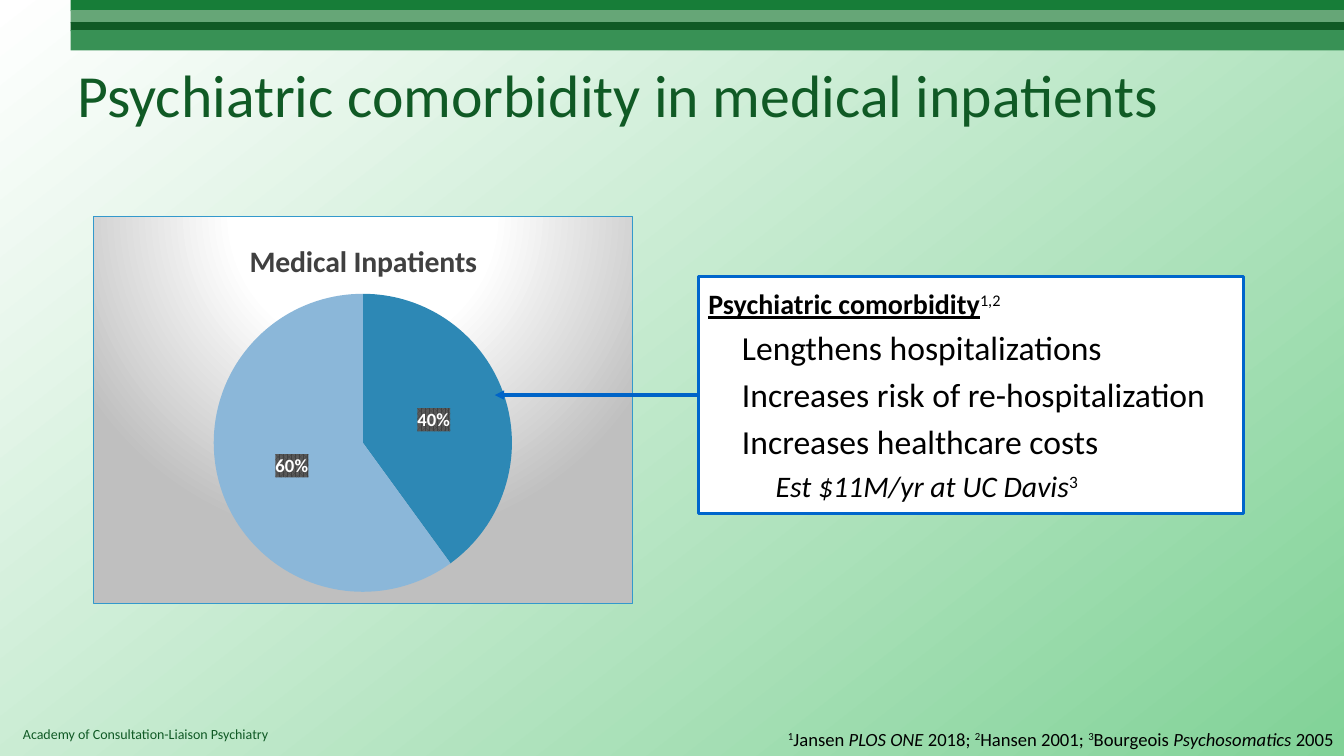
import pptx
import pptx.chart.data
import pptx.dml.color
import pptx.enum.chart
import pptx.enum.shapes
import pptx.enum.text
import pptx.oxml
import pptx.oxml.ns
import pptx.util
from pptx.util import Cm, Pt

FONT = "Calibri"
COLORS = {
    "white": "FFFFFF", "black": "000000", "backdrop": "81D297",
    "band_top": "177D38", "band_light": "66A677", "deep_green": "105A25", "band_base": "389155",
    "box_line": "0066CC", "arrow": "0064C8", "chart_line": "3399CC", "chart_gray": "BFBFBF",
    "chart_title": "404040", "label_dark": "404040", "label_stripe": "595959",
    "comorbid": "2D88B5", "other": "8BB7D9",
}
NS = pptx.oxml.ns.nsdecls("a", "c")
qn = pptx.oxml.ns.qn


def rgb(name):
    return pptx.dml.color.RGBColor.from_string(COLORS[name])


def solid(name):
    return f'<a:srgbClr val="{COLORS[name]}"/>'


def style_font(font, size, color, bold=None):
    font.name, font.size, font.bold = FONT, Pt(size), bold
    font.color.rgb = rgb(color)


def add_runs(paragraph, pieces):
    """Add (text, style) pieces: i italic, b bold, u underline, ^ superscript."""
    for text, style in pieces:
        run = paragraph.add_run()
        run.text = text
        for mark, attribute in (("i", "italic"), ("b", "bold"), ("u", "underline")):
            if mark in style:
                setattr(run.font, attribute, True)
        if "^" in style:
            run._r.get_or_add_rPr().set("baseline", "30000")


def add_text(slide, box, pieces, size, color, anchor="TOP", align="LEFT", wrap=True):
    frame = slide.shapes.add_textbox(*map(Cm, box)).text_frame
    frame.word_wrap = wrap
    frame.vertical_anchor = pptx.enum.text.MSO_ANCHOR[anchor]
    paragraph = frame.paragraphs[0]
    paragraph.alignment = pptx.enum.text.PP_ALIGN[align]
    style_font(paragraph.font, size, color)
    add_runs(paragraph, pieces)


def add_backdrop(slide):
    fill = slide.background.fill
    fill.gradient()
    fill.gradient_angle = 308
    for stop, color in zip(fill.gradient_stops, ("white", "backdrop")):
        stop.color.rgb = rgb(color)


def add_header_bands(slide, box):
    left, top, width, height = box
    bands = [("band_top", 0, 0.22), ("band_light", 0.2, 0.26),
             ("deep_green", 0.44, 0.18), ("band_base", 0.6, 0.4)]
    for color, offset, share in bands:
        band = slide.shapes.add_shape(
            pptx.enum.shapes.MSO_SHAPE.RECTANGLE, Cm(left), Cm(top + offset * height),
            Cm(width), Cm(share * height))
        band.shadow.inherit = False
        band.fill.solid()
        band.fill.fore_color.rgb = rgb(color)
        band.line.fill.background()


def set_layout(parent, index, **places):
    """Place a chart part by fractions of the chart frame."""
    for old in parent.findall(qn("c:layout")):
        parent.remove(old)
    target = '<c:layoutTarget val="inner"/>' if "w" in places else ""
    modes = "".join(f'<c:{key}Mode val="edge"/>' for key in "xy")
    values = "".join(f'<c:{key} val="{value}"/>' for key, value in places.items())
    parent.insert(index, pptx.oxml.parse_xml(
        f"<c:layout {NS}><c:manualLayout>{target}{modes}{values}</c:manualLayout></c:layout>"))


def add_inpatient_chart(slide, box):
    data = pptx.chart.data.CategoryChartData()
    data.categories = ["1", "2"]
    data.add_series("Series 1", (40, 60))
    chart = slide.shapes.add_chart(
        pptx.enum.chart.XL_CHART_TYPE.PIE, *map(Cm, box), data).chart
    style_font(chart.font, 10, "black")
    chart.has_legend = False

    # Frame with a radial gradient
    stops = "".join(f'<a:gs pos="{position}">{solid(color)}</a:gs>' for position, color in
                    ((0, "white"), (39000, "white"), (100000, "chart_gray")))
    chart._chartSpace.find(qn("c:chart")).addnext(pptx.oxml.parse_xml(
        f'<c:spPr {NS}><a:gradFill><a:gsLst>{stops}</a:gsLst><a:path path="circle">'
        '<a:fillToRect l="50000" t="-80000" r="50000" b="180000"/></a:path></a:gradFill>'
        f'<a:ln w="9525"><a:solidFill>{solid("chart_line")}</a:solidFill></a:ln></c:spPr>'))

    # Title
    chart.has_title = True
    title = chart.chart_title
    title.include_in_layout = False
    heading = title.text_frame.paragraphs[0]
    style_font(heading.font, 21.3, "chart_title", True)
    heading.add_run().text = "Medical Inpatients"
    set_layout(title._element, 1, x=0.28, y=0.05)
    set_layout(chart._chartSpace.find(".//" + qn("c:plotArea")), 0,
               x=0.22, y=0.2, w=0.56, h=0.77)

    # Slices and percentages
    plot = chart.plots[0]
    plot.vary_by_categories = True
    series = plot.series[0]
    for index, color in enumerate(("comorbid", "other")):
        slice_format = series.points[index].format
        slice_format.fill.solid()
        slice_format.fill.fore_color.rgb = rgb(color)
        slice_format.line.fill.background()
    labels = series.data_labels
    labels.show_percentage, labels.show_value = True, False
    labels.number_format, labels.number_format_is_linked = "0%", False
    labels.position = pptx.enum.chart.XL_LABEL_POSITION.CENTER
    style_font(labels.font, 13.3, "white", True)
    labels._element.find(qn("c:txPr")).addprevious(pptx.oxml.parse_xml(
        f'<c:spPr {NS}><a:pattFill prst="pct75"><a:fgClr>{solid("label_dark")}</a:fgClr>'
        f'<a:bgClr>{solid("label_stripe")}</a:bgClr></a:pattFill></c:spPr>'))


def add_comorbidity_box(slide, box):
    comorbidity = slide.shapes.add_shape(
        pptx.enum.shapes.MSO_SHAPE.RECTANGLE, *map(Cm, box))
    comorbidity.shadow.inherit = False
    comorbidity.fill.solid()
    comorbidity.fill.fore_color.rgb = rgb("white")
    comorbidity.line.color.rgb = rgb("box_line")
    comorbidity.line.width = Pt(2)
    frame = comorbidity.text_frame
    frame.word_wrap = True
    frame.vertical_anchor = pptx.enum.text.MSO_ANCHOR.MIDDLE
    lines = [
        (0, 20, [("Psychiatric comorbidity", "bu"), ("1,2", "^")]),
        (1, 24, [("Lengthens hospitalizations", "")]),
        (1, 24, [("Increases risk of re-hospitalization", "")]),
        (1, 24, [("Increases healthcare costs", "")]),
        (2, 21.3, [("Est $11M/yr at UC Davis", "i"), ("3", "^")]),
    ]
    for index, (level, size, pieces) in enumerate(lines):
        paragraph = frame.add_paragraph() if index else frame.paragraphs[0]
        paragraph._p.get_or_add_pPr().set("marL", str(Cm(0.85 * level)))
        paragraph.alignment = pptx.enum.text.PP_ALIGN.LEFT
        if index:
            paragraph.space_before = Pt(0.2 * size)
        style_font(paragraph.font, size, "black")
        add_runs(paragraph, pieces)
    return comorbidity


def add_arrow_to_slice(slide, comorbidity, tip_x):
    middle = comorbidity.top + comorbidity.height // 2
    arrow = slide.shapes.add_connector(
        pptx.enum.shapes.MSO_CONNECTOR.STRAIGHT, comorbidity.left, middle, Cm(tip_x), middle)
    arrow.begin_connect(comorbidity, 1)
    arrow.line.color.rgb = rgb("arrow")
    arrow.line.width = Pt(2.25)
    arrow.line._get_or_add_ln().append(pptx.oxml.parse_xml(f'<a:tailEnd {NS} type="triangle"/>'))
    arrow._element.spPr.append(pptx.oxml.parse_xml(f"<a:effectLst {NS}/>"))


def main():
    deck = pptx.Presentation()
    deck.slide_width, deck.slide_height = Cm(33.87), Cm(19.05)
    slide = deck.slides.add_slide(deck.slide_layouts[6])

    add_backdrop(slide)
    add_header_bands(slide, (1.78, 0, 32.09, 1.27))
    add_text(slide, (0.33, 18.16, 23.5, 0.69),
             [("Academy of Consultation-Liaison Psychiatry", "")], 10, "deep_green")
    add_text(slide, (1.7, 0.76, 30.48, 3.18),
             [("Psychiatric comorbidity in medical inpatients", "")],
             42.7, "deep_green", anchor="MIDDLE")
    comorbidity = add_comorbidity_box(slide, (17.6, 6.96, 13.74, 5.99))
    add_inpatient_chart(slide, (2.34, 5.44, 13.61, 9.78))
    add_arrow_to_slice(slide, comorbidity, 12.47)
    add_text(slide, (19.38, 18.21, 14.48, 0.84),
             [("1", "^"), ("Jansen ", ""), ("PLOS ONE ", "i"), ("2018; ", ""),
              ("2", "^"), ("Hansen 2001; ", ""), ("3", "^"), ("Bourgeois ", ""),
              ("Psychosomatics", "i"), (" 2005", "")],
             13.3, "black", align="RIGHT", wrap=False)
    deck.save("out.pptx")


if __name__ == "__main__":
    main()
